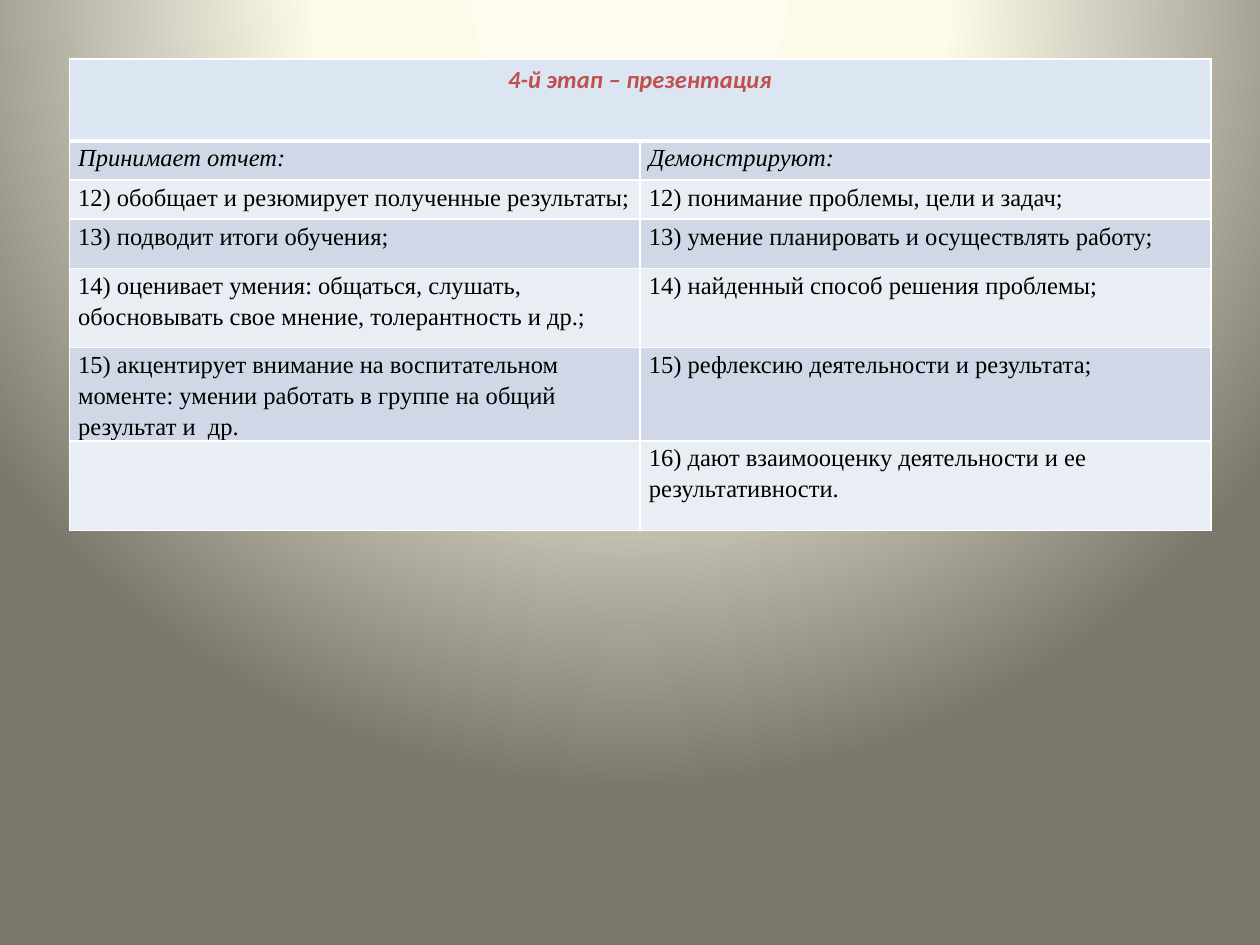
import pptx
import pptx.dml.color
import pptx.enum.text
import pptx.oxml
import pptx.oxml.ns
import pptx.util

COLORS = {
    "header": "DCE6F2", "dark band": "D0D8E8", "light band": "E9EDF4",
    "border": "FFFFFF", "title": "C0504D", "text": "000000",
    "glow": "FEFCEE", "glow edge": "FDFAEA", "shade": "7B796B",
}
ROWS = [
    ("4-й этап – презентация", ""),
    ("Принимает отчет:", "Демонстрируют:"),
    ("12) обобщает и резюмирует полученные результаты;",
     "12) понимание проблемы, цели и задач;"),
    ("13) подводит итоги обучения;",
     "13) умение планировать и осуществлять работу;"),
    ("14) оценивает умения: общаться, слушать, обосновывать свое мнение, толерантность и др.;",
     "14) найденный способ решения проблемы;"),
    ("15) акцентирует внимание на воспитательном моменте: умении работать в группе "
     "на общий результат и  др.",
     "15) рефлексию деятельности и результата;"),
    ("", "16) дают взаимооценку деятельности и ее результативности."),
]
ROW_HEIGHTS = [0.65, 0.31, 0.31, 0.39, 0.63, 0.74, 0.71]
COLUMN_WIDTH = 4.53
NAMESPACE = pptx.oxml.ns.nsdecls("a")


def set_borders(cell, widths):
    """Draw the left, right, top and bottom borders, with widths in points."""
    properties = cell._tc.get_or_add_tcPr()
    for position, (side, width) in enumerate(zip("LRTB", widths)):
        properties.insert(position, pptx.oxml.parse_xml(
            f'<a:ln{side} {NAMESPACE} w="{pptx.util.Pt(width)}"><a:solidFill>'
            f'<a:srgbClr val="{COLORS["border"]}"/></a:solidFill></a:ln{side}>'))


deck = pptx.Presentation()
deck.slide_width = pptx.util.Inches(10)
deck.slide_height = pptx.util.Inches(7.5)
page = deck.slides.add_slide(deck.slide_layouts[6])

# Circular background glow, centred above the top edge
page.background.fill.gradient()
linear = page.element.find(".//" + pptx.oxml.ns.qn("a:gradFill"))
stops = "".join(
    f'<a:gs pos="{share * 1000}"><a:srgbClr val="{COLORS[name]}"/></a:gs>'
    for share, name in [(0, "glow"), (40, "glow edge"), (100, "shade")])
linear.getparent().replace(linear, pptx.oxml.parse_xml(
    f'<a:gradFill {NAMESPACE} rotWithShape="1"><a:gsLst>{stops}</a:gsLst>'
    '<a:path path="circle"><a:fillToRect l="50000" t="-80000" r="50000" b="180000"/>'
    '</a:path></a:gradFill>'))

# Table of the stage
table = page.shapes.add_table(
    len(ROWS), 2, pptx.util.Inches(0.55), pptx.util.Inches(0.47),
    pptx.util.Inches(2 * COLUMN_WIDTH), pptx.util.Inches(sum(ROW_HEIGHTS))).table
for column in table.columns:
    column.width = pptx.util.Inches(COLUMN_WIDTH)
table.cell(0, 0).merge(table.cell(0, 1))

for row, (texts, height) in enumerate(zip(ROWS, ROW_HEIGHTS)):
    table.rows[row].height = pptx.util.Inches(height)
    is_header = row == 0
    band = "header" if is_header else "dark band" if row % 2 else "light band"
    for column, text in enumerate(texts):
        cell = table.cell(row, column)
        cell.fill.solid()
        cell.fill.fore_color.rgb = pptx.dml.color.RGBColor.from_string(COLORS[band])
        set_borders(cell, (1, 1, 3 if row == 1 else 1, 3 if is_header else 1))
        if not text:
            continue
        para = cell.text_frame.paragraphs[0]
        if is_header:
            para.alignment = pptx.enum.text.PP_ALIGN.CENTER
        else:
            cell.margin_left = cell.margin_right = pptx.util.Inches(0.07)
            cell.margin_top = cell.margin_bottom = 0
            para.line_spacing = 1.15
        span = para.add_run()
        span.text = text
        span.font.name = "Calibri" if is_header else "Times New Roman"
        span.font.size = pptx.util.Pt(14)
        span.font.bold = is_header
        span.font.italic = row < 2
        span.font.color.rgb = pptx.dml.color.RGBColor.from_string(
            COLORS["title" if is_header else "text"])

deck.save("out.pptx")
